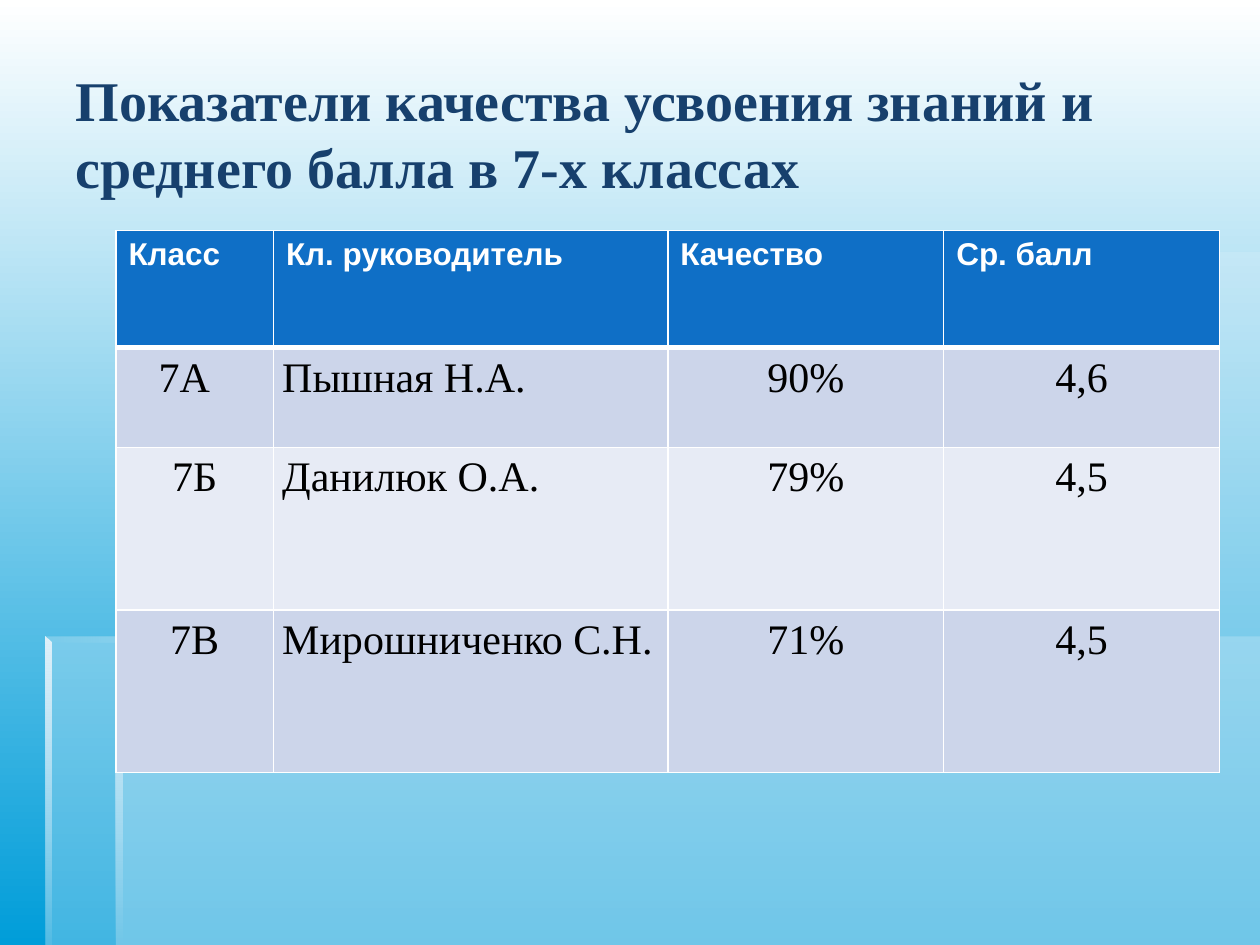
from lxml import etree
from pptx import Presentation
from pptx.dml.color import RGBColor
from pptx.enum.text import MSO_ANCHOR, PP_ALIGN
from pptx.oxml.ns import qn
from pptx.util import Inches, Pt

CENTER, JUSTIFY, LEFT = PP_ALIGN.CENTER, PP_ALIGN.JUSTIFY, PP_ALIGN.LEFT
MIDDLE = MSO_ANCHOR.MIDDLE
WHITE = RGBColor(0xFF, 0xFF, 0xFF)
BLACK = RGBColor(0x00, 0x00, 0x00)
SKY = RGBColor(0x00, 0x9D, 0xD9)
PALE = RGBColor(0xDB, 0xEF, 0xF9)
PALE_EDGE = RGBColor(0xE0, 0xF1, 0xFA)
GREY_EDGE = RGBColor(0xC9, 0xDB, 0xE4)
NAVY = RGBColor(0x17, 0x40, 0x6D)
HEADER_BLUE = RGBColor(0x0F, 0x6F, 0xC6)
BANDS = (RGBColor(0xCC, 0xD5, 0xEA), RGBColor(0xE7, 0xEB, 0xF5))
SERIF, SANS = "Times New Roman", "Arial"
DOWN, ACROSS = 270, 0

TITLE = "Показатели качества усвоения знаний и среднего балла в 7-х классах"
HEADINGS = ("Класс", "Кл. руководитель", "Качество", "Ср. балл")
CLASSES = (
    ("7А  ", "Пышная Н.А.", "90%", "4,6"),
    ("7Б", "Данилюк О.А.", "79%", "4,5"),
    ("7В", "Мирошниченко С.Н.", "71%", "4,5"),
)
COLUMN_WIDTHS = (1.25, 3.13, 2.19, 2.19)
ROW_HEIGHTS = (0.93, 0.79, 1.29, 1.29)


def set_gradient(fill, colors, angle):
    """Fill with an even two-colour gradient."""
    fill.gradient()
    fill.gradient_angle = angle
    for stop, color, position in zip(fill.gradient_stops, colors, (0, 1)):
        stop.color.rgb = color
        stop.position = position


def add_polygon(slide, points, colors, opacities, angle=DOWN):
    """Draw a borderless polygon in one colour or a two-colour gradient."""
    corners = [(Inches(x), Inches(y)) for x, y in points]
    builder = slide.shapes.build_freeform(*corners[0])
    builder.add_line_segments(corners[1:], close=True)
    shape = builder.convert_to_shape()
    shape.shadow.inherit = False
    shape.line.fill.background()
    if len(colors) == 1:
        shape.fill.solid()
        shape.fill.fore_color.rgb = colors[0]
    else:
        set_gradient(shape.fill, colors, angle)
    for color, opacity in zip(shape._element.spPr.iter(qn("a:srgbClr")), opacities):
        etree.SubElement(color, qn("a:alpha"), val=str(opacity * 1000))


def add_backdrop(slide, left, top, right, bottom):
    """Draw the sky gradient and the translucent panels with bevelled edges."""
    set_gradient(slide.background.fill, (WHITE, SKY), DOWN)
    inner, middle, edge = left + 0.56, top + 3.05, 0.05
    add_polygon(slide, ((inner, middle), (inner, bottom), (right, bottom), (right, middle)),
                (PALE,), (30,))
    add_polygon(slide, ((inner, middle), (left, middle), (left, bottom), (right, bottom),
                        (right, top), (inner, top)), (PALE,), (30,))
    for x, y, length in ((inner, top, 8), (left, middle, 5)):
        add_polygon(slide, ((x, y), (x, y + edge), (x + length, y + edge), (x + length, y)),
                    (PALE, GREY_EDGE), (0, 100), ACROSS)
    for x, y, end, opacity in ((inner, top, middle + edge, 100), (inner, middle, bottom, 0),
                               (left, middle, bottom, 10)):
        add_polygon(slide, ((x, y), (x, end), (x + edge, end), (x + edge, y + edge)),
                    (PALE_EDGE, PALE), (100, opacity))


def add_text(paragraph, text, size, font, color, bold):
    """Add one formatted run to a paragraph."""
    run = paragraph.add_run()
    run.text = text
    run.font.size = Pt(size)
    run.font.name = font
    run.font.color.rgb = color
    run.font.bold = bold


def place_title(slide, left, top, width, height):
    """Position and format the title above the backdrop."""
    title = slide.shapes.title
    slide.shapes._spTree.append(title._element)
    title.left, title.top = Inches(left), Inches(top)
    title.width, title.height = Inches(width), Inches(height)
    title.text_frame.word_wrap = True
    title.text_frame.vertical_anchor = MIDDLE
    paragraph = title.text_frame.paragraphs[0]
    paragraph.alignment = LEFT
    add_text(paragraph, TITLE, 32, SERIF, NAVY, True)


def set_borders(cell, widths):
    """Give a cell white borders, with widths in points by side."""
    properties = cell._tc.get_or_add_tcPr()
    for index, (side, width) in enumerate(widths.items()):
        line = etree.Element(qn(f"a:ln{side}"), w=str(Pt(width)))
        solid = etree.SubElement(line, qn("a:solidFill"))
        etree.SubElement(solid, qn("a:srgbClr"), val=str(WHITE))
        properties.insert(index, line)


def fill_cell(cell, text, row, column):
    """Write and style one cell as a heading or as class data."""
    heading = row == 0
    cell.fill.solid()
    cell.fill.fore_color.rgb = HEADER_BLUE if heading else BANDS[(row - 1) % 2]
    set_borders(cell, {"L": 1, "R": 1, "T": 3 if row == 1 else 1, "B": 3 if heading else 1})
    paragraph = cell.text_frame.paragraphs[0]
    if heading:
        add_text(paragraph, text, 18, SANS, WHITE, True)
        return
    cell.margin_left = cell.margin_right = Inches(0.07)
    cell.margin_top = cell.margin_bottom = 0
    paragraph.alignment = JUSTIFY if column == 1 else CENTER
    paragraph.line_spacing = 1.15
    add_text(paragraph, text, 24, SERIF, BLACK, False)


def add_class_table(slide, left, top, width, height):
    """Build the table of classes, teachers, quality and average mark."""
    rows = (HEADINGS, *CLASSES)
    frame = slide.shapes.add_table(len(rows), len(HEADINGS), Inches(left), Inches(top),
                                   Inches(width), Inches(height))
    table = frame.table
    for column, column_width in zip(table.columns, COLUMN_WIDTHS):
        column.width = Inches(column_width)
    for row, row_height in zip(table.rows, ROW_HEIGHTS):
        row.height = Inches(row_height)
    for row_index, texts in enumerate(rows):
        for column_index, text in enumerate(texts):
            fill_cell(table.cell(row_index, column_index), text, row_index, column_index)


def main():
    """Build and save the presentation."""
    presentation = Presentation()
    presentation.slide_width, presentation.slide_height = Inches(10), Inches(7.5)
    slide = presentation.slides.add_slide(presentation.slide_layouts[5])
    add_backdrop(slide, 0.36, 2, 10, 7.5)
    place_title(slide, 0.5, 0.27, 9.17, 1.57)
    add_class_table(slide, 0.92, 1.83, sum(COLUMN_WIDTHS), sum(ROW_HEIGHTS))
    presentation.save("out.pptx")


if __name__ == "__main__":
    main()
